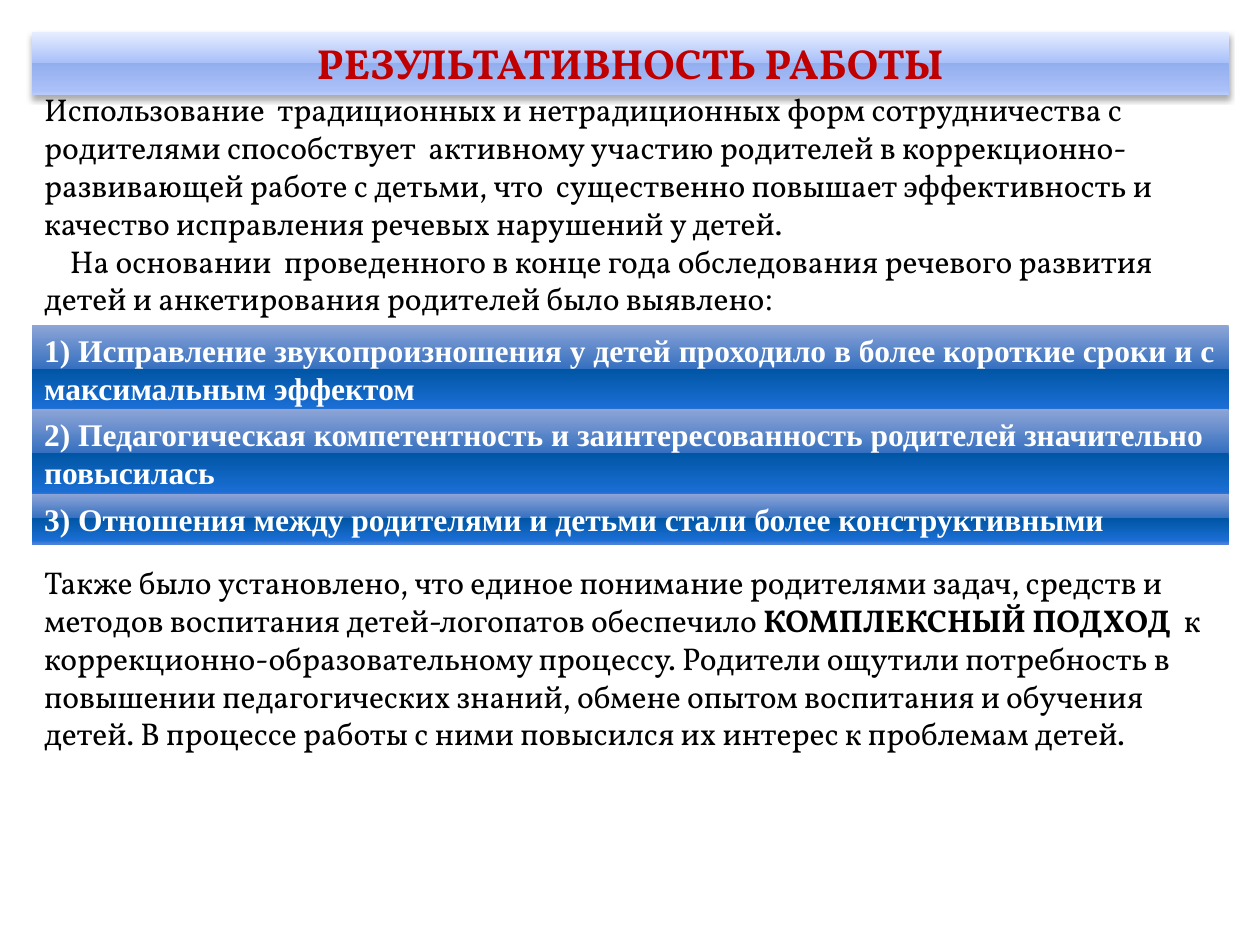
from lxml.etree import SubElement
from pptx import Presentation
from pptx.dml.color import RGBColor
from pptx.enum.shapes import MSO_SHAPE
from pptx.enum.text import MSO_ANCHOR, MSO_AUTO_SIZE, PP_ALIGN
from pptx.oxml.ns import qn
from pptx.util import Cm, Pt

BLACK = RGBColor(0x00, 0x00, 0x00)
WHITE = RGBColor(0xFF, 0xFF, 0xFF)
RED = RGBColor(0xC0, 0x00, 0x00)
PALE_BANDS = [
    (0, RGBColor(0xE6, 0xED, 0xFF)),
    (49, RGBColor(0xA9, 0xC0, 0xF9)),
    (49, RGBColor(0x93, 0xAE, 0xEE)),
    (92, RGBColor(0xA9, 0xC0, 0xF9)),
    (100, RGBColor(0xB9, 0xCB, 0xF8)),
]
BLUE_BANDS = [
    (0, RGBColor(0x8E, 0xA5, 0xD7)),
    (49, RGBColor(0x35, 0x70, 0xC0)),
    (49, RGBColor(0x00, 0x56, 0xA4)),
    (92, RGBColor(0x1A, 0x6D, 0xD3)),
    (100, RGBColor(0x4E, 0x82, 0xD9)),
]

SERIF = "Times New Roman"
BODY = "Vollkorn"
LEFT, WIDTH = Cm(0.64), Cm(24.13)
FINDINGS_TOP, FINDINGS_STEP = 6.55, 1.7

TITLE = "РЕЗУЛЬТАТИВНОСТЬ РАБОТЫ"
INTRO = (
    "Использование  традиционных и нетрадиционных форм сотрудничества с родителями "
    "способствует  активному участию родителей в коррекционно-развивающей работе с детьми, "
    "что  существенно повышает эффективность и качество исправления речевых нарушений у детей."
)
BASIS = (
    "На основании  проведенного в конце года обследования речевого развития детей "
    "и анкетирования родителей было выявлено"
)
FINDINGS = [
    ("1) Исправление звукопроизношения у детей проходило в более короткие сроки "
     "и с максимальным эффектом", 1.8),
    ("2) Педагогическая компетентность и заинтересованность родителей значительно повысилась", 1.8),
    ("3) Отношения между родителями и детьми стали более конструктивными", 1.02),
]
CONCLUSION = [
    ("Также было установлено, что единое понимание родителями задач, средств и методов "
     "воспитания детей-логопатов обеспечило ", BODY, False),
    ("КОМПЛЕКСНЫЙ ПОДХОД  ", BODY, True),
    ("к коррекционно-образовательному процессу. Родители ощутили потребность в повышении "
     "педагогических знаний, обмене опытом воспитания и обучения детей. В процессе работы "
     "с ними повысился их интерес к проблемам детей.", BODY, False),
]


def style(font, name, size, color, bold):
    font.name = name
    font.size = Pt(size)
    font.color.rgb = color
    font.bold = bold


def fill_bands(shape, bands):
    shape.fill.gradient()
    shape.fill.gradient_angle = 270
    stops = shape.fill._xPr.find(f".//{qn('a:gsLst')}")
    for stop in list(stops):
        stops.remove(stop)
    for percent, color in bands:
        stop = SubElement(stops, qn("a:gs"), pos=str(percent * 1000))
        SubElement(stop, qn("a:srgbClr"), val=str(color))


def add_soft_shadow(shape):
    effects = shape._element.spPr.find(qn("a:effectLst"))
    shadow = SubElement(effects, qn("a:outerShdw"), blurRad=str(Pt(3.5)),
                        dist=str(Pt(2.2)), dir="5400000", rotWithShape="0")
    color = SubElement(shadow, qn("a:srgbClr"), val=str(BLACK))
    SubElement(color, qn("a:alpha"), val="32000")


def add_band(slide, top, height, bands, text, font_name, size, color):
    band = slide.shapes.add_shape(MSO_SHAPE.RECTANGLE, LEFT, Cm(top), WIDTH, Cm(height))
    band.shadow.inherit = False
    band.line.fill.background()
    fill_bands(band, bands)
    frame = band.text_frame
    frame.word_wrap = True
    frame.auto_size = MSO_AUTO_SIZE.SHAPE_TO_FIT_TEXT
    frame.vertical_anchor = MSO_ANCHOR.TOP
    frame.text = text
    paragraph = frame.paragraphs[0]
    paragraph.alignment = PP_ALIGN.LEFT
    style(paragraph.runs[0].font, font_name, size, color, True)
    return band


def add_prose(slide, top, height, paragraphs):
    frame = slide.shapes.add_textbox(LEFT, Cm(top), WIDTH, Cm(height)).text_frame
    frame.word_wrap = True
    frame.auto_size = MSO_AUTO_SIZE.SHAPE_TO_FIT_TEXT
    for index, pieces in enumerate(paragraphs):
        paragraph = frame.add_paragraph() if index else frame.paragraphs[0]
        for text, font_name, bold in pieces:
            run = paragraph.add_run()
            run.text = text
            style(run.font, font_name, 18, BLACK, bold)
    return frame


def main():
    """Build the slide on the results of the work and save it."""
    deck = Presentation()
    deck.slide_width, deck.slide_height = Cm(25.4), Cm(19.05)
    slide = deck.slides.add_slide(deck.slide_layouts[6])

    title = add_band(slide, 0.64, 1.27, PALE_BANDS, TITLE, BODY, 24, RED)
    title.text_frame.paragraphs[0].alignment = PP_ALIGN.CENTER
    add_soft_shadow(title)

    intro = add_prose(slide, 1.7, 4.88, [
        [(INTRO, BODY, False)],
        [(BASIS, BODY, False), (":", SERIF, False)],
    ])
    intro.paragraphs[1]._p.get_or_add_pPr().set("indent", str(Cm(0.52)))

    for index, (finding, height) in enumerate(FINDINGS):
        top = FINDINGS_TOP + index * FINDINGS_STEP
        band = add_band(slide, top, height, BLUE_BANDS, finding, SERIF, 18, WHITE)
        band.text_frame.paragraphs[0].line_spacing = Pt(21.6)

    add_prose(slide, 11.23, 4.11, [CONCLUSION])
    deck.save("out.pptx")


if __name__ == "__main__":
    main()
